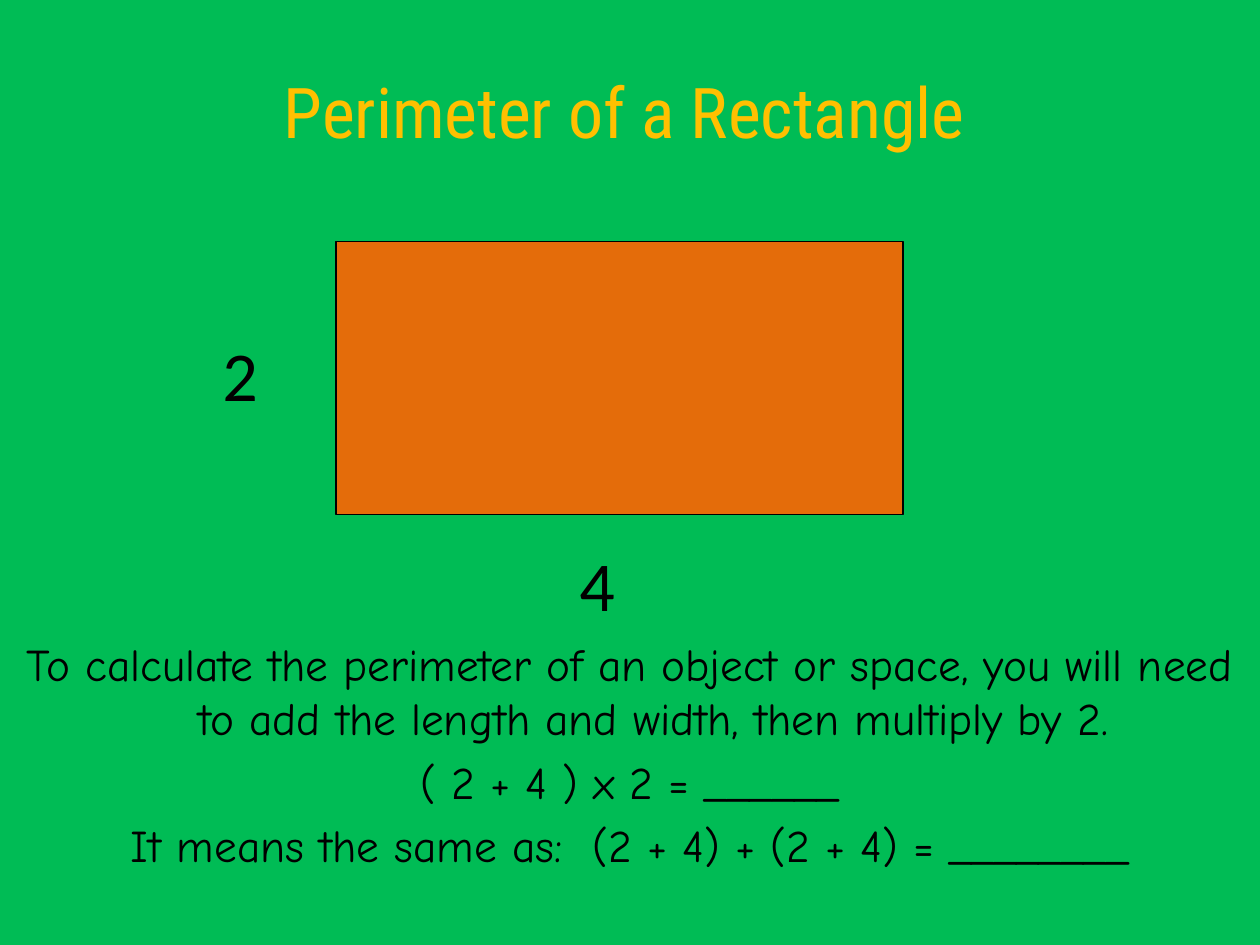
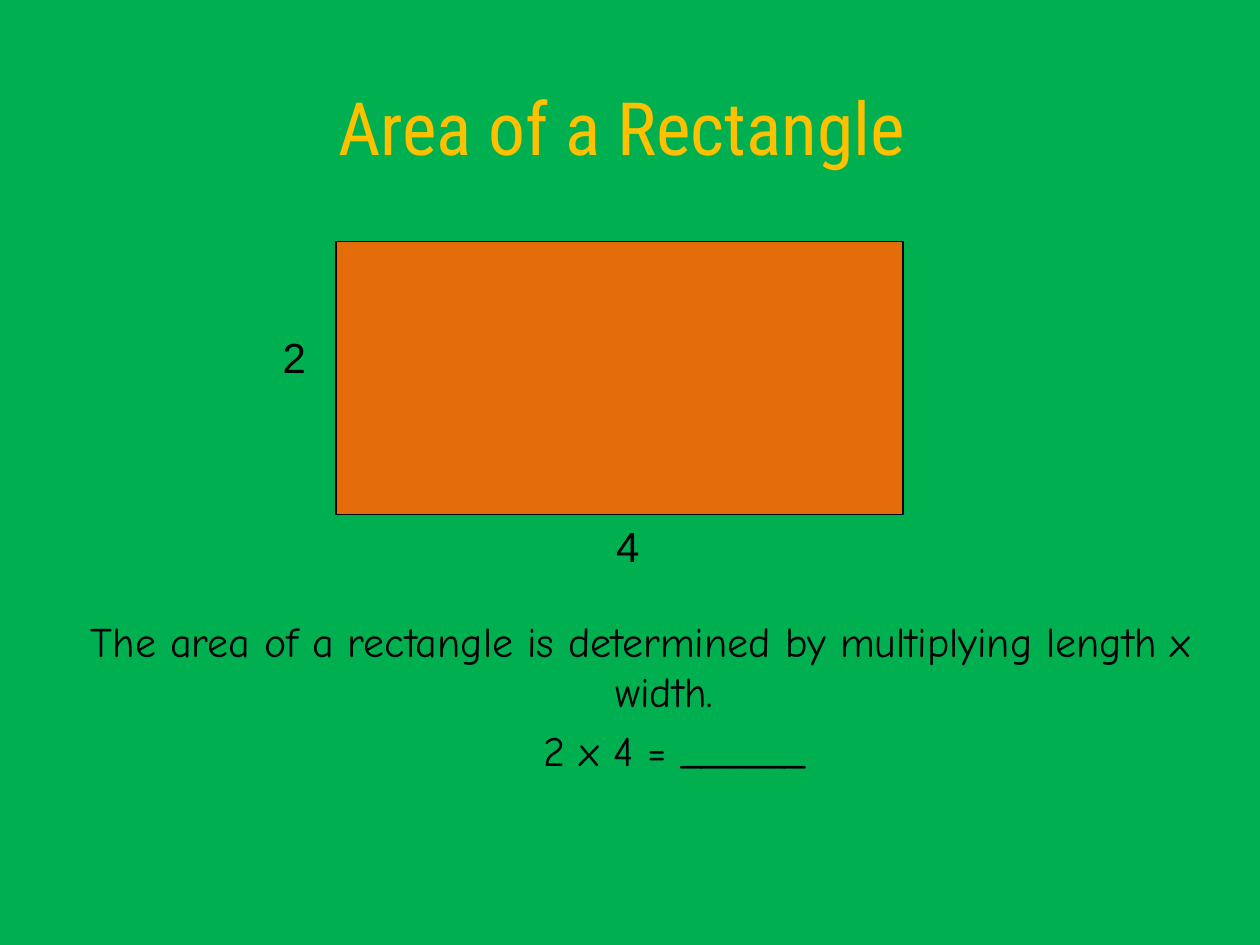
from pptx import Presentation
from pptx.dml.color import RGBColor
from pptx.enum.shapes import MSO_SHAPE
from pptx.enum.text import MSO_ANCHOR, PP_ALIGN
from pptx.util import Pt

EMU_PER_PX = 9525
PAGE = (0, 0, 960, 720)
RECTANGLE = (256, 184, 432, 208)
GOLD, ORANGE, BLACK = "FFC000", "E46C0A", "000000"
HANGING = 36


def px(n):
    return n * EMU_PER_PX


def rgb(color):
    return RGBColor.from_string(color)


def add_block(s, box, fill, line=None):
    sp = s.shapes.add_shape(MSO_SHAPE.RECTANGLE, *map(px, box))
    sp.shadow.inherit = False
    sp.fill.solid()
    sp.fill.fore_color.rgb = rgb(fill)
    if line:
        sp.line.color.rgb = rgb(line)
        sp.line.width = Pt(0.75)
    else:
        sp.line.fill.background()


def add_text(s, box, lines, font, size, color=BLACK, align=PP_ALIGN.LEFT, wrap=True):
    tf = s.shapes.add_textbox(*map(px, box)).text_frame
    tf.word_wrap = wrap
    tf.text = "\n".join(lines)
    for p in tf.paragraphs:
        p.alignment = align
        for r in p.runs:
            r.font.name = font
            r.font.size = Pt(size)
            r.font.color.rgb = rgb(color)
    return tf


def add_title(s, box, text, size, right_inset=10):
    tf = add_text(s, box, [text], "Roboto Condensed", size, GOLD, PP_ALIGN.CENTER)
    tf.vertical_anchor = MSO_ANCHOR.MIDDLE
    tf.margin_right = px(right_inset)


def add_explanation(s, box, lines, size, formula_indent=HANGING):
    tf = add_text(s, box, lines, "Comic Neue", size, align=PP_ALIGN.CENTER)
    for i, p in enumerate(tf.paragraphs):
        pPr = p._p.get_or_add_pPr()
        pPr.set("marL", str(px(formula_indent if i else HANGING)))
        pPr.set("indent", str(px(-HANGING)))
        if i:
            p.space_before = Pt(round(size * 0.2))


def add_figure(s, box, width_label, length_label, font, size):
    left, top, _, height = box
    add_block(s, box, ORANGE, BLACK)
    dx, dy, w, h = width_label
    add_text(s, (left + dx, top + dy, w, h), ["2"], font, size)
    dx, dy, w, h = length_label
    add_text(s, (left + dx, top + height + dy, w, h), ["4"], font, size, wrap=False)


def add_page(prs, color):
    s = prs.slides.add_slide(prs.slide_layouts[6])
    add_block(s, PAGE, color)
    return s


def perimeter_slide(prs):
    s = add_page(prs, "00BC55")
    add_title(s, (48, 16, 856, 136), "Perimeter of a Rectangle", 40)
    add_explanation(s, (0, 480, 960, 224), [
        "To calculate the perimeter of an object or space, you will need "
        "to add the length and width, then multiply by 2.",
        "( 2 + 4 ) x 2 = ______",
        "It means the same as:  (2 + 4) + (2 + 4) = ________",
    ], 25.9)
    add_figure(s, RECTANGLE, (-96, 64, 74, 74), (176, 16, 65, 74), "Calibri", 40)


def area_slide(prs):
    s = add_page(prs, "00B050")
    add_title(s, (88, 48, 824, 96), "Area of a Rectangle", 42, right_inset=62)
    add_explanation(s, (48, 464, 880, 224), [
        "The area of a rectangle is determined by multiplying length x width.",
        "2 x 4 = ______",
    ], 24, formula_indent=88)
    add_figure(s, RECTANGLE, (-50, 64, 74, 48), (204, 0, 37, 48), "Arial", 24)


def main():
    prs = Presentation()
    prs.slide_width, prs.slide_height = px(PAGE[2]), px(PAGE[3])
    perimeter_slide(prs)
    area_slide(prs)
    prs.save("out.pptx")


if __name__ == "__main__":
    main()
